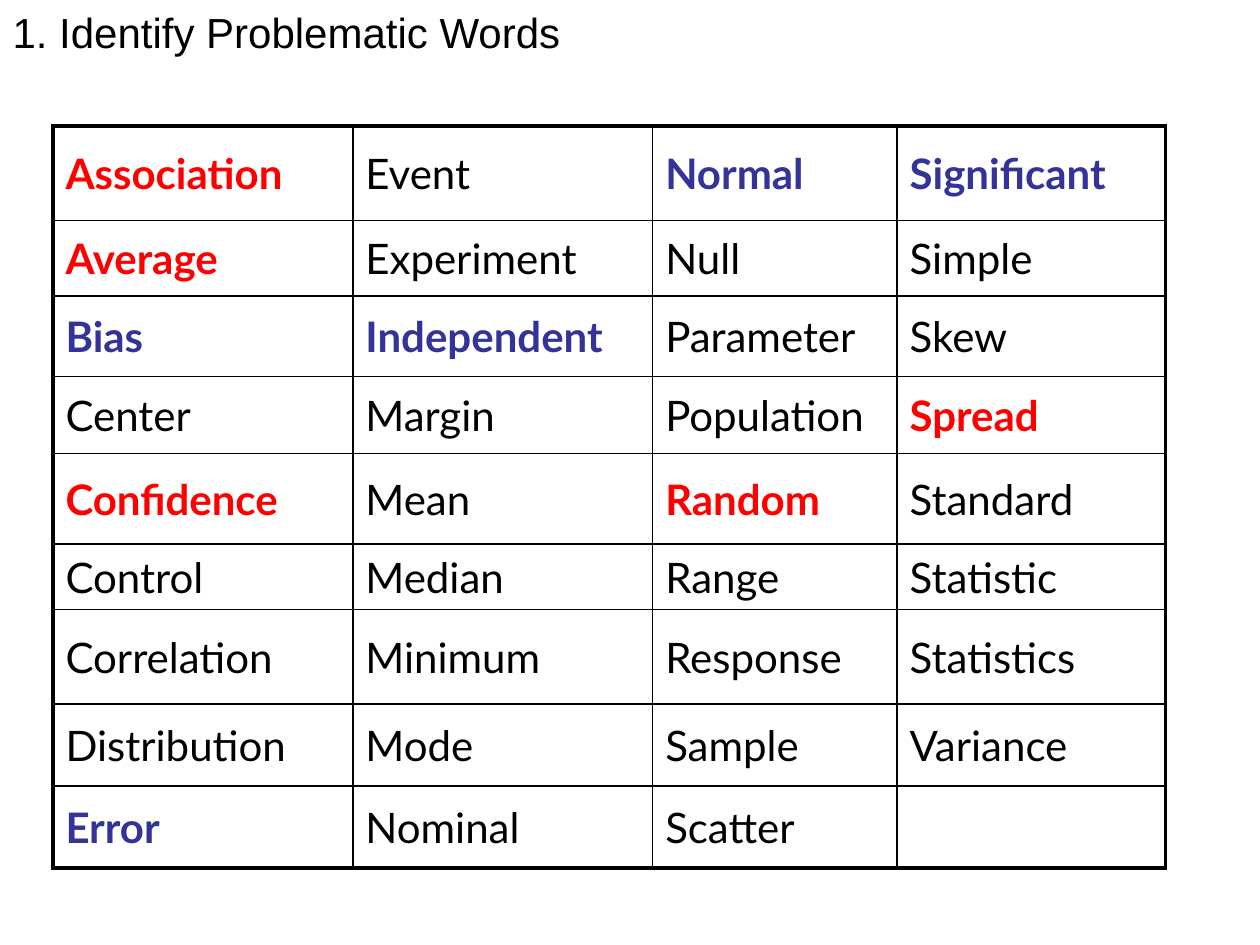
"""Build a slide that lists statistical terms and marks the problematic ones."""
from dataclasses import dataclass

from lxml import etree
from pptx import Presentation
from pptx.dml.color import RGBColor
from pptx.enum.text import MSO_ANCHOR, MSO_AUTO_SIZE, PP_ALIGN
from pptx.oxml.ns import qn
from pptx.util import Inches, Pt

TOP, MIDDLE = MSO_ANCHOR.TOP, MSO_ANCHOR.MIDDLE
LEFT = PP_ALIGN.LEFT
FIT_SHAPE = MSO_AUTO_SIZE.SHAPE_TO_FIT_TEXT

COLUMNS = [
    ["Association", "Average", "Bias", "Center", "Confidence", "Control",
     "Correlation", "Distribution", "Error"],
    ["Event", "Experiment", "Independent", "Margin", "Mean", "Median",
     "Minimum", "Mode", "Nominal"],
    ["Normal", "Null", "Parameter", "Population", "Random", "Range",
     "Response", "Sample", "Scatter"],
    ["Significant", "Simple", "Skew", "Spread", "Standard", "Statistic",
     "Statistics", "Variance", ""],
]
COL_WIDTHS = [2.38, 2.38, 1.94, 2.13]
ROW_HEIGHTS = [0.75, 0.6, 0.64, 0.61, 0.72, 0.52, 0.75, 0.65, 0.65]
RED_WORDS = {"Association", "Average", "Confidence", "Random", "Spread"}
BLUE_WORDS = {"Bias", "Error", "Independent", "Normal", "Significant"}


@dataclass(frozen=True)
class Theme:
    text: str = "000000"
    red: str = "FF0000"
    blue: str = "333399"
    title_font: str = "Arial"
    table_font: str = "Lato"
    size: float = 24
    inner_line: float = 1
    outer_line: float = 2.25


def write_text(tf, text, *, font, size, color, bold=False, before=None):
    p = tf.paragraphs[0]
    p.alignment = LEFT
    if before is not None:
        space = etree.SubElement(p._p.get_or_add_pPr(), qn("a:spcBef"))
        etree.SubElement(space, qn("a:spcPct"), val=str(before * 1000))
    r = p.add_run()
    r.text = text
    r.font.name = font
    r.font.size = Pt(size)
    r.font.bold = bold
    r.font.color.rgb = RGBColor.from_string(color)


class SlideBuilder:
    def __init__(self, prs, theme):
        self.theme = theme
        self.s = prs.slides.add_slide(prs.slide_layouts[5])

    def title(self, text, left, top, width, height):
        sp = self.s.shapes.title
        sp.left, sp.top = Inches(left), Inches(top)
        sp.width, sp.height = Inches(width), Inches(height)
        tf = sp.text_frame
        tf.word_wrap = False
        tf.auto_size = FIT_SHAPE
        tf.vertical_anchor = TOP
        write_text(tf, text, font=self.theme.title_font,
                   size=self.theme.size, color=self.theme.text)

    def border(self, cell, side, outer):
        width = self.theme.outer_line if outer else self.theme.inner_line
        ln = etree.SubElement(cell._tc.get_or_add_tcPr(), qn(f"a:ln{side}"),
                              w=str(int(Pt(width))))
        fill = etree.SubElement(ln, qn("a:solidFill"))
        etree.SubElement(fill, qn("a:srgbClr"), val=self.theme.text)

    def word(self, cell, text):
        th = self.theme
        color = (th.red if text in RED_WORDS
                 else th.blue if text in BLUE_WORDS else th.text)
        write_text(cell.text_frame, text, font=th.table_font, size=th.size,
                   color=color, bold=color != th.text, before=20)

    def table(self, columns, left, top, widths, heights):
        n_rows, n_cols = len(heights), len(widths)
        table = self.s.shapes.add_table(
            n_rows, n_cols, Inches(left), Inches(top),
            Inches(sum(widths)), Inches(sum(heights))).table
        table.first_row = table.horz_banding = False
        for col, width in zip(table.columns, widths):
            col.width = Inches(width)
        for row, height in zip(table.rows, heights):
            row.height = Inches(height)
        for j, words in enumerate(columns):
            for i, text in enumerate(words):
                cell = table.cell(i, j)
                cell.vertical_anchor = MIDDLE
                edges = {"L": j == 0, "R": j == n_cols - 1,
                         "T": i == 0, "B": i == n_rows - 1}
                for side, outer in edges.items():
                    self.border(cell, side, outer)
                cell.fill.background()
                if text:
                    self.word(cell, text)


def main():
    prs = Presentation()
    prs.slide_width, prs.slide_height = Inches(10), Inches(7.5)
    slide = SlideBuilder(prs, Theme())
    slide.title("1. Identify Problematic Words", 0, 0, 4.56, 0.5)
    slide.table(COLUMNS, 0.42, 1, COL_WIDTHS, ROW_HEIGHTS)
    prs.save("out.pptx")


if __name__ == "__main__":
    main()
